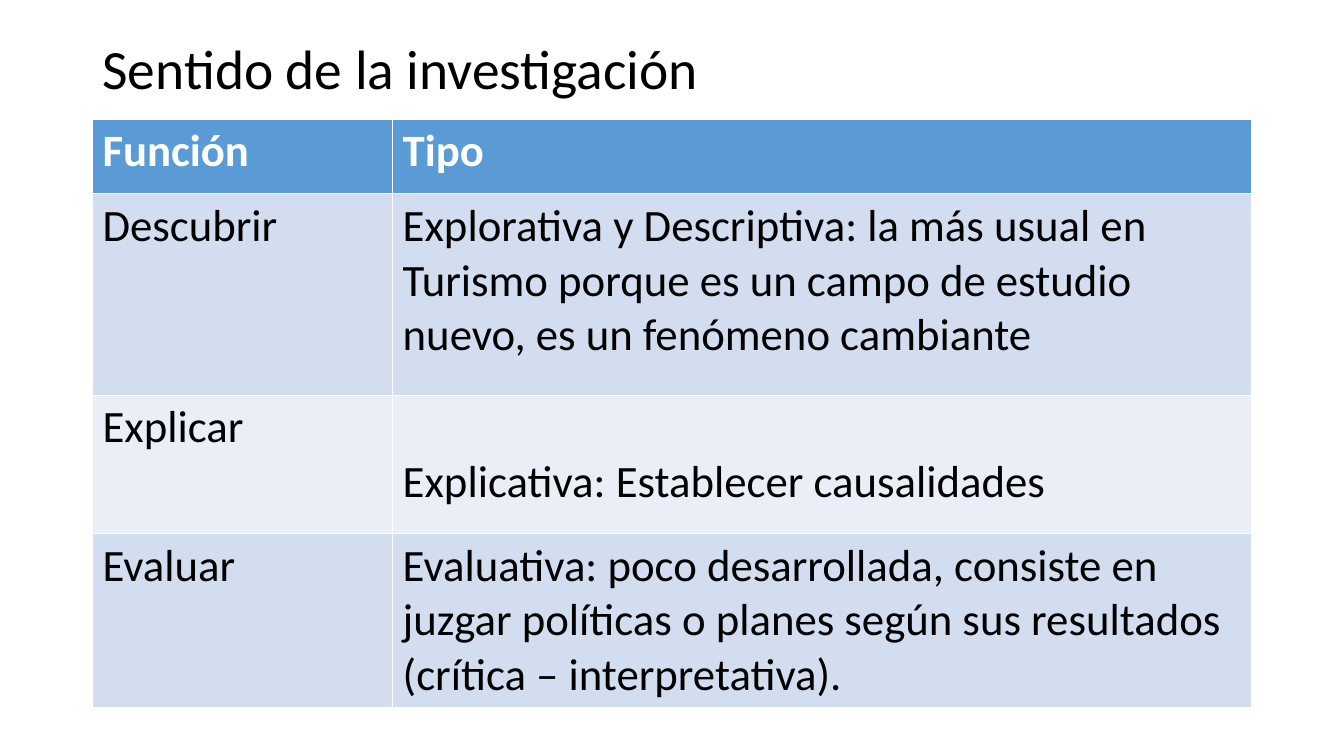
import pptx
import pptx.dml.color
import pptx.enum.text
import pptx.util
from dataclasses import dataclass

Cm = pptx.util.Cm
Pt = pptx.util.Pt


@dataclass(frozen=True)
class Theme:
    """Colours, font and type sizes of the slide."""
    font: str = "Calibri"
    ink: str = "000000"
    white: str = "FFFFFF"
    head: str = "5B9BD5"
    bands: tuple = ("D2DEEF", "EAEFF7")
    title: float = 39.6
    body: float = 32


theme = Theme()

ROWS = [
    ("Función", "Tipo"),
    ("Descubrir", "Explorativa y Descriptiva: la más usual en Turismo porque "
     "es un campo de estudio nuevo, es un fenómeno cambiante"),
    ("Explicar", "Explicativa: Establecer causalidades"),
    ("Evaluar", "Evaluativa: poco desarrollada, consiste en juzgar políticas o "
     "planes según sus resultados (crítica – interpretativa)."),
]
SHARES = (0.259, 0.741)
HEIGHTS = (1.88, 5.08, 3.48, 4.38)
DROP = Cm(1.5)


def paint(code):
    """Turn a hex code into a colour."""
    return pptx.dml.color.RGBColor.from_string(code)


def write(frame, text, size=theme.body, color=theme.ink, bold=False, space=1.0):
    """Put one formatted, left-aligned paragraph in a text frame."""
    line = frame.paragraphs[0]
    line.alignment = pptx.enum.text.PP_ALIGN.LEFT
    line.line_spacing = space
    run = line.add_run()
    run.text = text
    run.font.name = theme.font
    run.font.size = Pt(size)
    run.font.bold = bold
    run.font.color.rgb = paint(color)


def add_title(slide, left, top, width, height):
    """Place the slide title in its box."""
    title = slide.shapes.title
    title.left, title.top = left, top
    title.width, title.height = width, height
    frame = title.text_frame
    frame.word_wrap = True
    frame.auto_size = pptx.enum.text.MSO_AUTO_SIZE.NONE
    frame.vertical_anchor = pptx.enum.text.MSO_ANCHOR.MIDDLE
    write(frame, "Sentido de la investigación", size=theme.title, space=0.9)


def add_grid(slide, left, top, width):
    """Place the table of functions and types across the given width."""
    height = Cm(sum(HEIGHTS))
    grid = slide.shapes.add_table(
        len(ROWS), len(SHARES), left, top, width, height).table
    for column, share in zip(grid.columns, SHARES):
        column.width = int(width * share)
    for i, (texts, tall) in enumerate(zip(ROWS, HEIGHTS)):
        grid.rows[i].height = Cm(tall)
        head = i == 0
        fill = theme.head if head else theme.bands[(i - 1) % 2]
        for j, text in enumerate(texts):
            cell = grid.cell(i, j)
            cell.fill.solid()
            cell.fill.fore_color.rgb = paint(fill)
            write(cell.text_frame, text, bold=head,
                  color=theme.white if head else theme.ink)
    grid.cell(2, 1).margin_top = DROP


def main():
    """Build and save the slide."""
    deck = pptx.Presentation()
    deck.slide_width, deck.slide_height = Cm(33.87), Cm(19.05)
    slide = deck.slides.add_slide(deck.slide_layouts[5])
    left, width = Cm(2.33), Cm(29.21)
    add_title(slide, left, Cm(1.02), width, Cm(1.57))
    add_grid(slide, left, Cm(3), width)
    deck.save("out.pptx")


if __name__ == "__main__":
    main()
